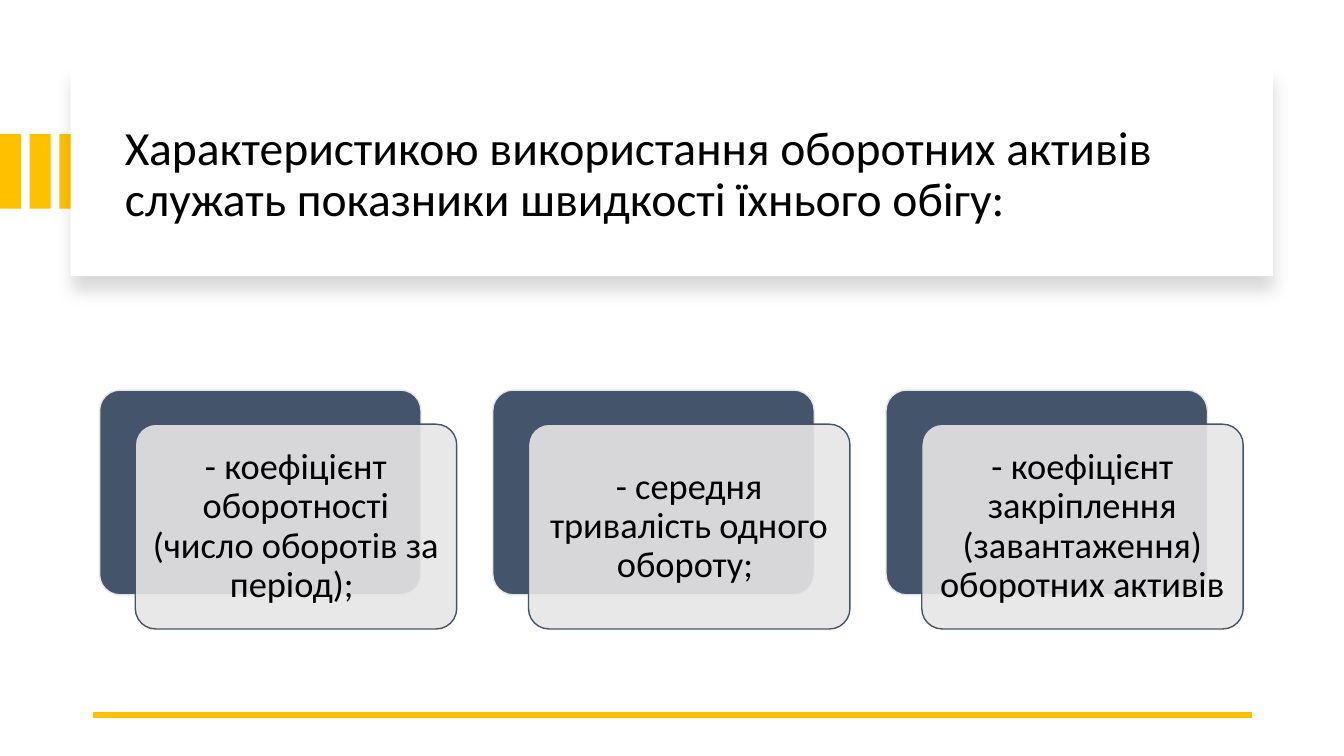
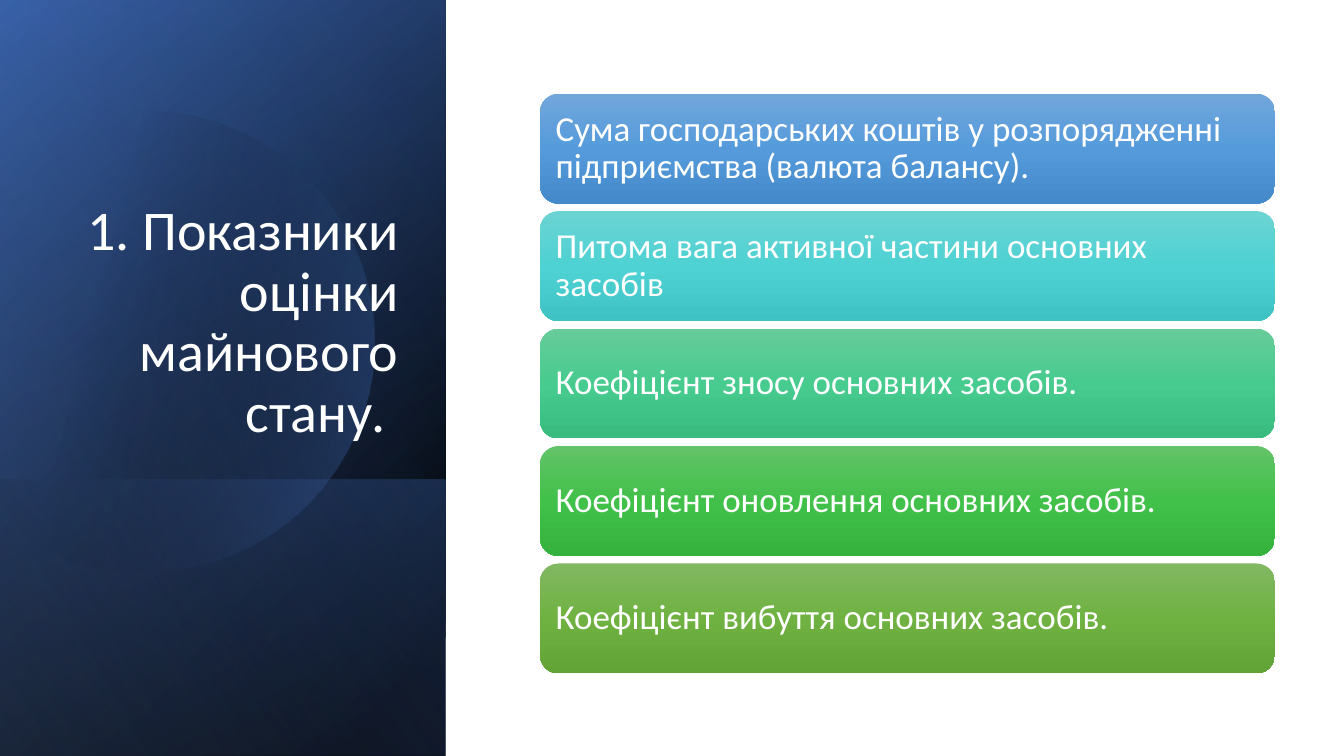
import math

from lxml import etree
from pptx import Presentation
from pptx.dml.color import RGBColor
from pptx.enum.shapes import MSO_CONNECTOR, MSO_SHAPE
from pptx.enum.text import MSO_ANCHOR, PP_ALIGN
from pptx.oxml.ns import qn
from pptx.util import Cm, Pt

RECTANGLE = MSO_SHAPE.RECTANGLE
ROUNDED = MSO_SHAPE.ROUNDED_RECTANGLE
STRAIGHT = MSO_CONNECTOR.STRAIGHT
LEFT, CENTER, RIGHT = PP_ALIGN.LEFT, PP_ALIGN.CENTER, PP_ALIGN.RIGHT
MIDDLE, BOTTOM = MSO_ANCHOR.MIDDLE, MSO_ANCHOR.BOTTOM

BLACK = RGBColor(0x00, 0x00, 0x00)
WHITE = RGBColor(0xFF, 0xFF, 0xFF)
GOLD = RGBColor(0xFF, 0xC0, 0x00)
SLATE = RGBColor(0x44, 0x54, 0x6A)
PALE = RGBColor(0xE7, 0xE6, 0xE6)
NAVY = RGBColor(0x2F, 0x55, 0x97)
BLUE = RGBColor(0x44, 0x72, 0xC4)
LIGHT_BLUE = RGBColor(0x8F, 0xAA, 0xDC)

SLIDE_WIDTH, SLIDE_HEIGHT = 33.87, 19.05
PANEL_WIDTH = 11.23

INDICATORS = [
    "- коефіцієнт оборотності (число оборотів за період); ",
    "- середня тривалість одного обороту; ",
    "- коефіцієнт закріплення (завантаження) оборотних активів",
]
PROPERTY_BARS = [
    ("Сума господарських коштів у розпорядженні підприємства (валюта балансу).",
     (RGBColor(0x71, 0xA6, 0xDB), RGBColor(0x55, 0x9B, 0xDB), RGBColor(0x44, 0x8A, 0xCA))),
    ("Питома вага активної частини основних засобів",
     (RGBColor(0x6C, 0xD3, 0xD3), RGBColor(0x4E, 0xD2, 0xD3), RGBColor(0x3E, 0xC2, 0xC3))),
    ("Коефіцієнт зносу основних засобів.",
     (RGBColor(0x67, 0xCC, 0x9A), RGBColor(0x47, 0xCB, 0x8E), RGBColor(0x39, 0xBB, 0x7F))),
    ("Коефіцієнт оновлення основних засобів.",
     (RGBColor(0x63, 0xC3, 0x68), RGBColor(0x42, 0xC1, 0x4A), RGBColor(0x34, 0xB2, 0x3D))),
    ("Коефіцієнт вибуття основних засобів.",
     (RGBColor(0x81, 0xB8, 0x61), RGBColor(0x6F, 0xB2, 0x42), RGBColor(0x62, 0xA3, 0x36))),
]


def add_alpha(color_element, opacity):
    if opacity < 100:
        etree.SubElement(color_element, qn("a:alpha"), val=str(opacity * 1000))


def add_color(parent, color, opacity):
    add_alpha(etree.SubElement(parent, qn("a:srgbClr"), val=str(color)), opacity)


class Deck:
    font = "Calibri"
    line_spacing = 0.9

    def __init__(self):
        self.presentation = Presentation()
        self.presentation.slide_width = Cm(SLIDE_WIDTH)
        self.presentation.slide_height = Cm(SLIDE_HEIGHT)
        self.slide = None

    def new_slide(self):
        layout = self.presentation.slide_layouts[6]
        self.slide = self.presentation.slides.add_slide(layout)

    def box(self, kind, left, top, width, height, fill=None, opacity=100, line=None):
        shape = self.slide.shapes.add_shape(kind, Cm(left), Cm(top), Cm(width), Cm(height))
        shape.shadow.inherit = False
        if fill is None:
            shape.fill.background()
        else:
            shape.fill.solid()
            shape.fill.fore_color.rgb = fill
            add_alpha(shape._element.spPr.find(qn("a:solidFill"))[0], opacity)
        if line is None:
            shape.line.fill.background()
        else:
            shape.line.color.rgb = line
            shape.line.width = Pt(1)
        return shape

    def drop_shadow(self, shape, opacity, blur, distance):
        effects = shape._element.spPr.find(qn("a:effectLst"))
        shadow = etree.SubElement(
            effects, qn("a:outerShdw"), blurRad=str(Pt(blur)), dist=str(Pt(distance)),
            dir="5400000", algn="t", rotWithShape="0")
        add_color(shadow, BLACK, opacity)

    def gradient(self, shape, angle, stops):
        shape.fill.background()
        properties = shape._element.spPr
        fill = etree.Element(qn("a:gradFill"), rotWithShape="1")
        stop_list = etree.SubElement(fill, qn("a:gsLst"))
        for position, color, opacity in stops:
            stop = etree.SubElement(stop_list, qn("a:gs"), pos=str(position * 1000))
            add_color(stop, color, opacity)
        etree.SubElement(fill, qn("a:lin"), ang=str(angle * 60000), scaled="0")
        properties.replace(properties.find(qn("a:noFill")), fill)

    def turned_panel(self, top, height, angle, stops):
        shift = (PANEL_WIDTH - height) / 2
        shape = self.box(RECTANGLE, shift, top - shift, height, PANEL_WIDTH)
        shape.rotation = 90
        shape._element.spPr.find(qn("a:xfrm")).set("flipH", "1")
        self.gradient(shape, angle, stops)

    def cut_circle(self, center_x, center_y, radius, angle, stops):
        limit = math.acos(-center_x / radius)
        steps = 120
        points = []
        for step in range(steps + 1):
            turn = limit * (2 * step / steps - 1)
            points.append((Cm(center_x + radius * math.cos(turn)),
                           Cm(center_y + radius * math.sin(turn))))
        builder = self.slide.shapes.build_freeform(*points[0])
        builder.add_line_segments(points[1:], close=True)
        shape = builder.convert_to_shape()
        shape.shadow.inherit = False
        shape.line.fill.background()
        self.gradient(shape, angle, stops)

    def add_text(self, shape, text, size, color, align=LEFT, anchor=MIDDLE, inset=None):
        frame = shape.text_frame
        frame.word_wrap = True
        frame.vertical_anchor = anchor
        if inset is not None:
            frame.margin_left = frame.margin_right = Cm(inset)
            frame.margin_top = frame.margin_bottom = Cm(inset)
        paragraph = frame.paragraphs[0]
        paragraph.alignment = align
        paragraph.line_spacing = self.line_spacing
        run = paragraph.add_run()
        run.text = text
        run.font.name = self.font
        run.font.size = Pt(size)
        run.font.color.rgb = color

    def title(self, text, left, top, width, height, size, color, align=LEFT, anchor=MIDDLE):
        shape = self.slide.shapes.add_textbox(Cm(left), Cm(top), Cm(width), Cm(height))
        self.add_text(shape, text, size, color, align, anchor)

    def rule(self, start, end, top, color, width):
        line = self.slide.shapes.add_connector(STRAIGHT, Cm(start), Cm(top), Cm(end), Cm(top))
        line.line.color.rgb = color
        line.line.width = Pt(width)
        etree.SubElement(line._element.spPr, qn("a:effectLst"))

    def card(self, text, left, top):
        width, height = 8.1, 5.16
        back = self.box(ROUNDED, left, top, width, height, SLATE, line=PALE)
        front = self.box(ROUNDED, left + 0.9, top + 0.86, width, height, PALE, 90, SLATE)
        for shape in (back, front):
            shape.adjustments[0] = 0.1
        self.add_text(front, text, 26, BLACK, CENTER, inset=0.28)

    def bar(self, text, colors, top):
        shape = self.box(ROUNDED, 13.61, top, 18.52, 2.77)
        stops = [(50 * index, color, 100) for index, color in enumerate(colors)]
        self.gradient(shape, 90, stops)
        self.add_text(shape, text, 25, WHITE, inset=0.26)


def turnover_slide(deck):
    deck.new_slide()
    for index in range(3):
        deck.box(RECTANGLE, 0.75 * index, 3.38, 0.53, 1.88, GOLD)
    header = deck.box(RECTANGLE, 1.78, 1.7, 30.3, 5.26, WHITE)
    deck.drop_shadow(header, opacity=15, blur=11, distance=10)
    deck.title("Характеристикою використання оборотних активів служать показники "
               "швидкості їхнього обігу:", 2.9, 2.26, 28.27, 4.32, 34, BLACK)
    deck.rule(31.55, 2.34, 18.01, GOLD, 4.5)
    for index, text in enumerate(INDICATORS):
        deck.card(text, 2.51 + 9.91 * index, 9.83)


def property_slide(deck):
    deck.new_slide()
    deck.turned_panel(0, SLIDE_HEIGHT, 50, [(8, BLACK, 100), (100, NAVY, 100)])
    deck.turned_panel(0, SLIDE_HEIGHT, 30, [(0, BLACK, 0), (99, BLUE, 46)])
    deck.turned_panel(12.09, 6.96, 130, [(2, BLUE, 29), (100, BLACK, 30)])
    deck.cut_circle(3.63, 8.61, 5.82, 14, [(29, BLACK, 0), (100, BLUE, 43)])
    deck.turned_panel(0, SLIDE_HEIGHT, 120, [(0, BLACK, 0), (99, LIGHT_BLUE, 11)])
    deck.title("1. Показники оцінки майнового стану. ",
               1.63, 4.67, 8.66, 6.65, 40, WHITE, RIGHT, BOTTOM)
    for index, (text, colors) in enumerate(PROPERTY_BARS):
        deck.bar(text, colors, 2.36 + 2.96 * index)


def main():
    deck = Deck()
    turnover_slide(deck)
    property_slide(deck)
    deck.presentation.save("out.pptx")


if __name__ == "__main__":
    main()
